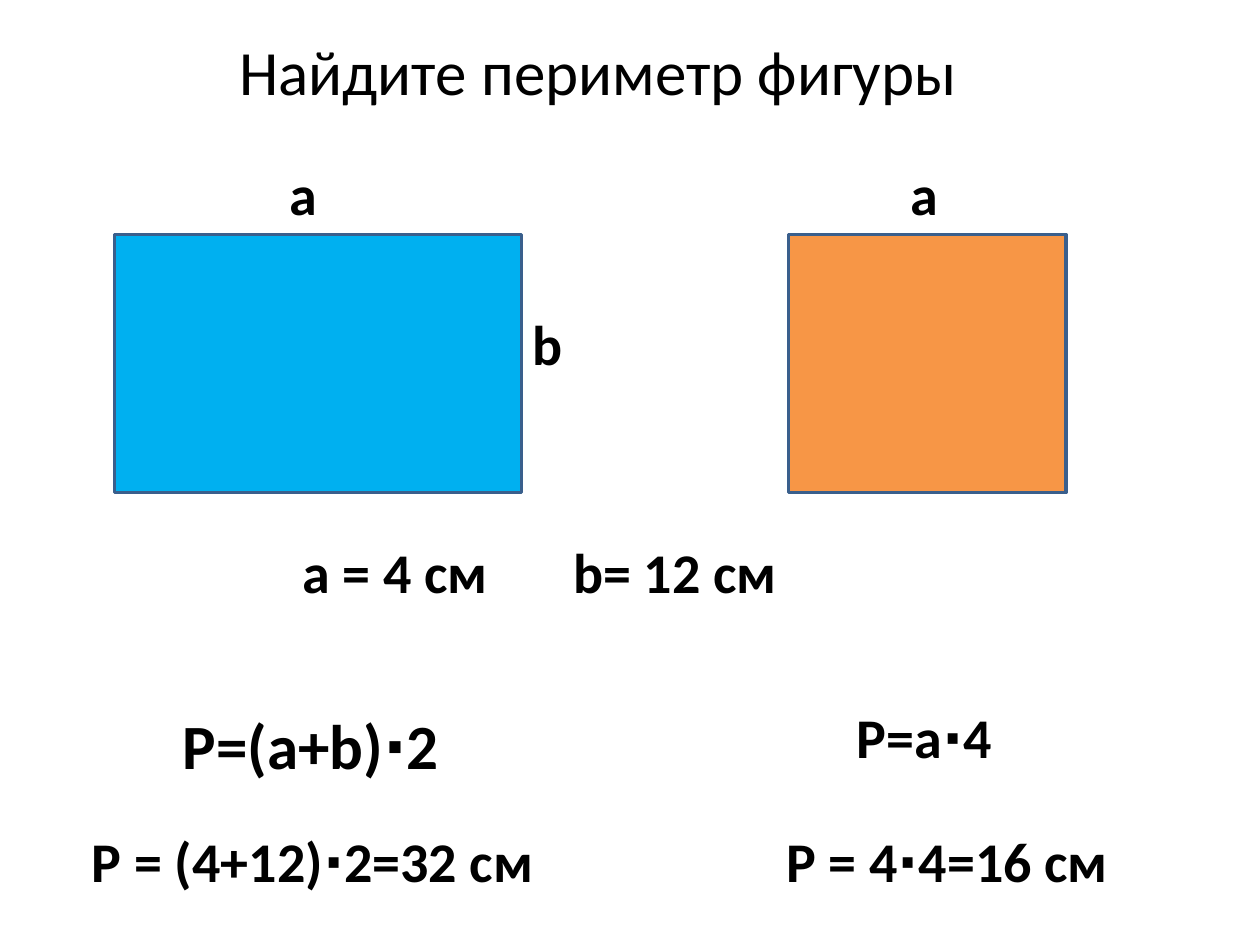
from lxml import etree
from pptx import Presentation
from pptx.dml.color import RGBColor
from pptx.enum.shapes import MSO_SHAPE
from pptx.enum.text import MSO_AUTO_SIZE
from pptx.oxml.ns import qn
from pptx.util import Inches, Pt

RECTANGLE = MSO_SHAPE.RECTANGLE
GROW = MSO_AUTO_SIZE.SHAPE_TO_FIT_TEXT

COLUMNS, ROWS = 100, 75
COLORS = {"text": "000000", "rectangle": "00B0F0", "square": "F79646", "outline": "3A5F8C"}
STYLES = {
    "title": {"size": Pt(36), "bold": False},
    "formula": {"size": Pt(36), "bold": True},
    "label": {"size": Pt(32), "bold": True},
}
LINE_ROWS = {36: 7.1, 32: 6.4}

FIGURE_TOP, FIGURE_HEIGHT = 18.6, 20.5
SIDE_LABEL_TOP = FIGURE_TOP - LINE_ROWS[32]
ANSWER_TOP = 65.1
FIGURES = [("rectangle", 9.1, 32.3), ("square", 62.6, 22)]

# text, style, left column, top row, columns wide, indent in columns
TEXTS = [
    ("Найдите периметр фигуры", "title", 14.6, 2.1, 66.1, 3.4),
    ("a", "label", 13, SIDE_LABEL_TOP, 18.1, 9),
    ("a", "label", 67.3, SIDE_LABEL_TOP, 13.4, 4),
    ("b", "label", 41.3, 24.1, 4.7, 0),
    ("a = 4 см\tb= 12 см", "label", 13, 42.2, 58.3, 10),
    ("P=(a+b)∙2", "formula", 11.2, 55.6, 30.7, 2.3),
    ("P=a∙4", "label", 63, 55.3, 22, 4),
    ("Р = (4+12)∙2=32 см", "label", 4.3, ANSWER_TOP, 39.4, 2),
    ("Р = 4∙4=16 см", "label", 59.4, ANSWER_TOP, 29.9, 2),
]
TAB_COLUMN = 21.5
INSET = 1

presentation = Presentation()
presentation.slide_width, presentation.slide_height = Inches(10), Inches(7.5)
slide = presentation.slides.add_slide(presentation.slide_layouts[6])


def across(columns):
    return round(presentation.slide_width * columns / COLUMNS)


def down(rows):
    return round(presentation.slide_height * rows / ROWS)


def color(name):
    return RGBColor.from_string(COLORS[name])


def add_figure(name, left, width):
    shape = slide.shapes.add_shape(
        RECTANGLE, across(left), down(FIGURE_TOP), across(width), down(FIGURE_HEIGHT))
    shape.shadow.inherit = False
    shape.fill.solid()
    shape.fill.fore_color.rgb = color(name)
    shape.line.color.rgb = color("outline")
    shape.line.width = Pt(2)


def add_tab_stop(paragraph):
    properties = paragraph._p.get_or_add_pPr()
    stops = etree.SubElement(properties, qn("a:tabLst"))
    etree.SubElement(stops, qn("a:tab"), pos=str(across(TAB_COLUMN)), algn="l")


def add_text(text, style, left, top, width, indent):
    height = LINE_ROWS[int(STYLES[style]["size"].pt)]
    box = slide.shapes.add_textbox(across(left), down(top), across(width), down(height))
    frame = box.text_frame
    settings = {
        "word_wrap": True,
        "auto_size": GROW,
        "margin_left": across(INSET + indent),
        "margin_right": 0,
    }
    for attribute, value in settings.items():
        setattr(frame, attribute, value)
    paragraph = frame.paragraphs[0]
    if "\t" in text:
        add_tab_stop(paragraph)
    run = paragraph.add_run()
    run.text = text
    for attribute, value in {"name": "Calibri", **STYLES[style]}.items():
        setattr(run.font, attribute, value)
    run.font.color.rgb = color("text")


for figure in FIGURES:
    add_figure(*figure)
for entry in TEXTS:
    add_text(*entry)

presentation.save("out.pptx")
